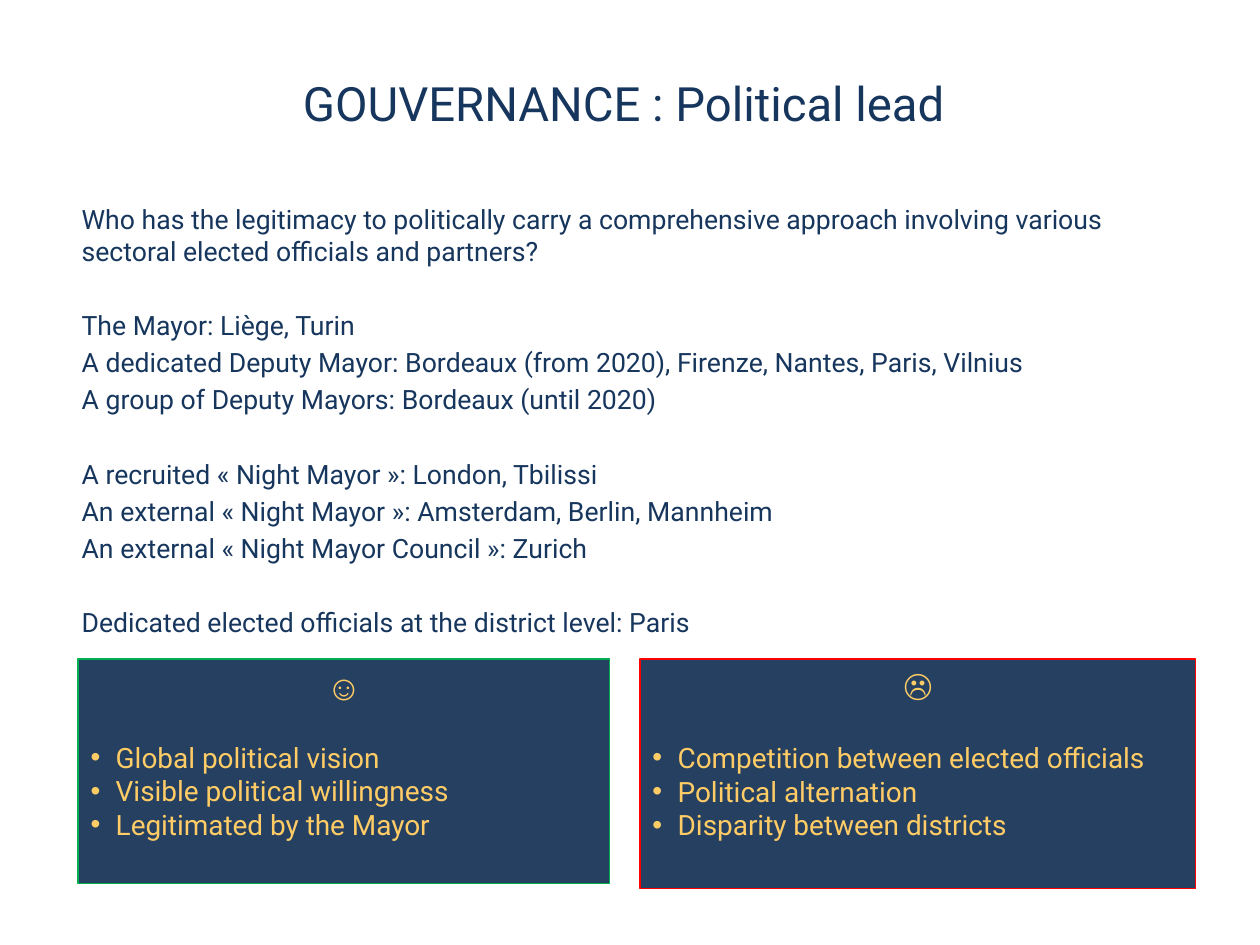
from dataclasses import dataclass

from lxml.etree import SubElement
from pptx import Presentation
from pptx.dml.color import RGBColor
from pptx.enum.shapes import MSO_SHAPE
from pptx.enum.text import MSO_ANCHOR, PP_ALIGN
from pptx.oxml.ns import qn
from pptx.util import Inches, Pt


@dataclass(frozen=True)
class Theme:
    navy: RGBColor = RGBColor.from_string("17365D")
    panel: RGBColor = RGBColor.from_string("254061")
    gold: RGBColor = RGBColor.from_string("FFCC66")
    green: RGBColor = RGBColor.from_string("00B050")
    red: RGBColor = RGBColor.from_string("FF0000")
    font: str = "Roboto"
    symbol_font: str = "Arial"
    title_size: float = 27
    body_size: float = 15.2
    bullet_size: float = 16
    line_gap: float = 3.04
    group_gap: float = 24.2


THEME = Theme()

LEAD_GROUPS = [
    [
        "Who has the legitimacy to politically carry a comprehensive approach "
        "involving various sectoral elected officials and partners?"
    ],
    [
        "The Mayor: Liège, Turin",
        "A dedicated Deputy Mayor: Bordeaux (from 2020), Firenze, Nantes, Paris, Vilnius",
        "A group of Deputy Mayors: Bordeaux (until 2020)",
    ],
    [
        "A recruited « Night Mayor »: London, Tbilissi",
        "An external « Night Mayor »: Amsterdam, Berlin, Mannheim",
        "An external « Night Mayor Council »: Zurich",
    ],
    ["Dedicated elected officials at the district level: Paris"],
]
STRENGTHS = [
    "Global political vision",
    "Visible political willingness",
    "Legitimated by the Mayor",
]
WEAKNESSES = [
    "Competition between elected officials",
    "Political alternation",
    "Disparity between districts",
]


def write_paragraph(frame, text, size, color, font=THEME.font, align=PP_ALIGN.LEFT, before=0):
    para = frame.paragraphs[0]
    if para.text:
        para = frame.add_paragraph()
    para.text = text
    para.alignment = align
    para.space_before = Pt(before)
    span = para.runs[0]
    span.font.name = font
    span.font.size = Pt(size)
    span.font.color.rgb = color
    return para


def add_bullet(para):
    properties = para._p.get_or_add_pPr()
    properties.set("marL", str(Inches(0.28)))
    properties.set("indent", str(-Inches(0.2)))
    properties.set("marL", str(Inches(0.2)))
    SubElement(properties, qn("a:buFont")).set("typeface", THEME.symbol_font)
    SubElement(properties, qn("a:buChar")).set("char", "•")


def add_text_frame(page, box):
    frame = page.shapes.add_textbox(*map(Inches, box)).text_frame
    frame.word_wrap = True
    return frame


def add_title(page, box, text):
    frame = add_text_frame(page, box)
    frame.vertical_anchor = MSO_ANCHOR.MIDDLE
    write_paragraph(frame, text, THEME.title_size, THEME.navy, align=PP_ALIGN.CENTER)


def add_lead_list(page, box, groups):
    frame = add_text_frame(page, box)
    for group_index, group in enumerate(groups):
        for line_index, text in enumerate(group):
            starts_group = group_index > 0 and line_index == 0
            gap = THEME.group_gap if starts_group else THEME.line_gap
            write_paragraph(frame, text, THEME.body_size, THEME.navy, before=gap)


def add_panel(page, box, outline, symbol, symbol_size, bullet_gap, points):
    panel = page.shapes.add_shape(MSO_SHAPE.RECTANGLE, *map(Inches, box))
    panel.shadow.inherit = False
    panel.fill.solid()
    panel.fill.fore_color.rgb = THEME.panel
    panel.line.color.rgb = outline
    panel.line.width = Pt(0.75)
    frame = panel.text_frame
    frame.word_wrap = True
    frame.vertical_anchor = MSO_ANCHOR.TOP
    write_paragraph(
        frame, symbol, symbol_size, THEME.gold, THEME.symbol_font, PP_ALIGN.CENTER
    )
    for index, point in enumerate(points):
        gap = bullet_gap if index == 0 else 0
        add_bullet(write_paragraph(frame, point, THEME.bullet_size, THEME.gold, before=gap))


def add_governance_slide(deck):
    page = deck.slides.add_slide(deck.slide_layouts[6])
    add_title(page, (0.7, 0.23, 8.5, 1.17), "GOUVERNANCE : Political lead")
    add_lead_list(page, (0.55, 1.56, 8.67, 3.44), LEAD_GROUPS)
    add_panel(page, (0.62, 5.23, 4.22, 1.78), THEME.green, "☺", 20, 19, STRENGTHS)
    add_panel(page, (5.08, 5.23, 4.41, 1.82), THEME.red, "☹", 18, 21.5, WEAKNESSES)


def main():
    deck = Presentation()
    deck.slide_width = Inches(10)
    deck.slide_height = Inches(7.5)
    add_governance_slide(deck)
    deck.save("out.pptx")


if __name__ == "__main__":
    main()
